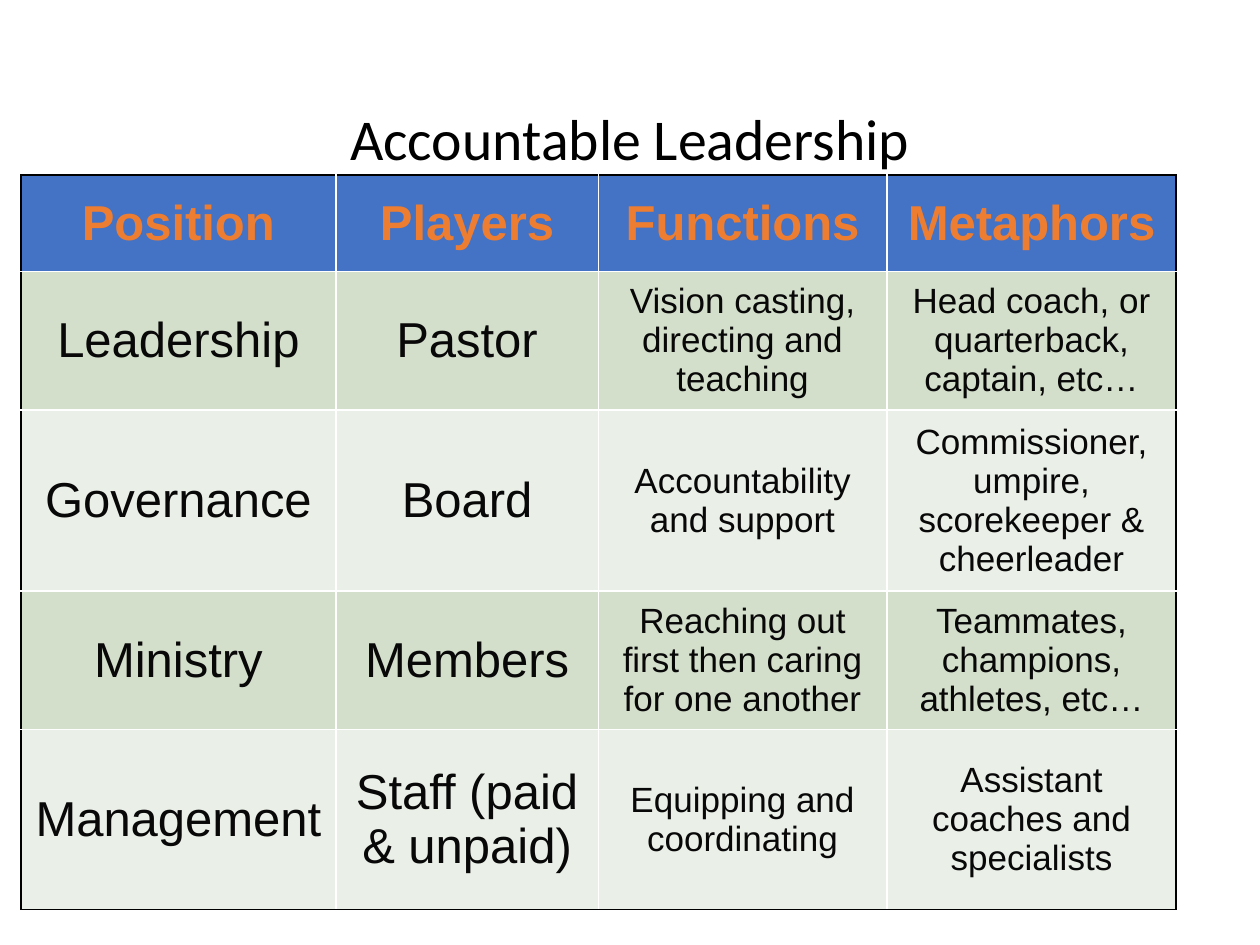
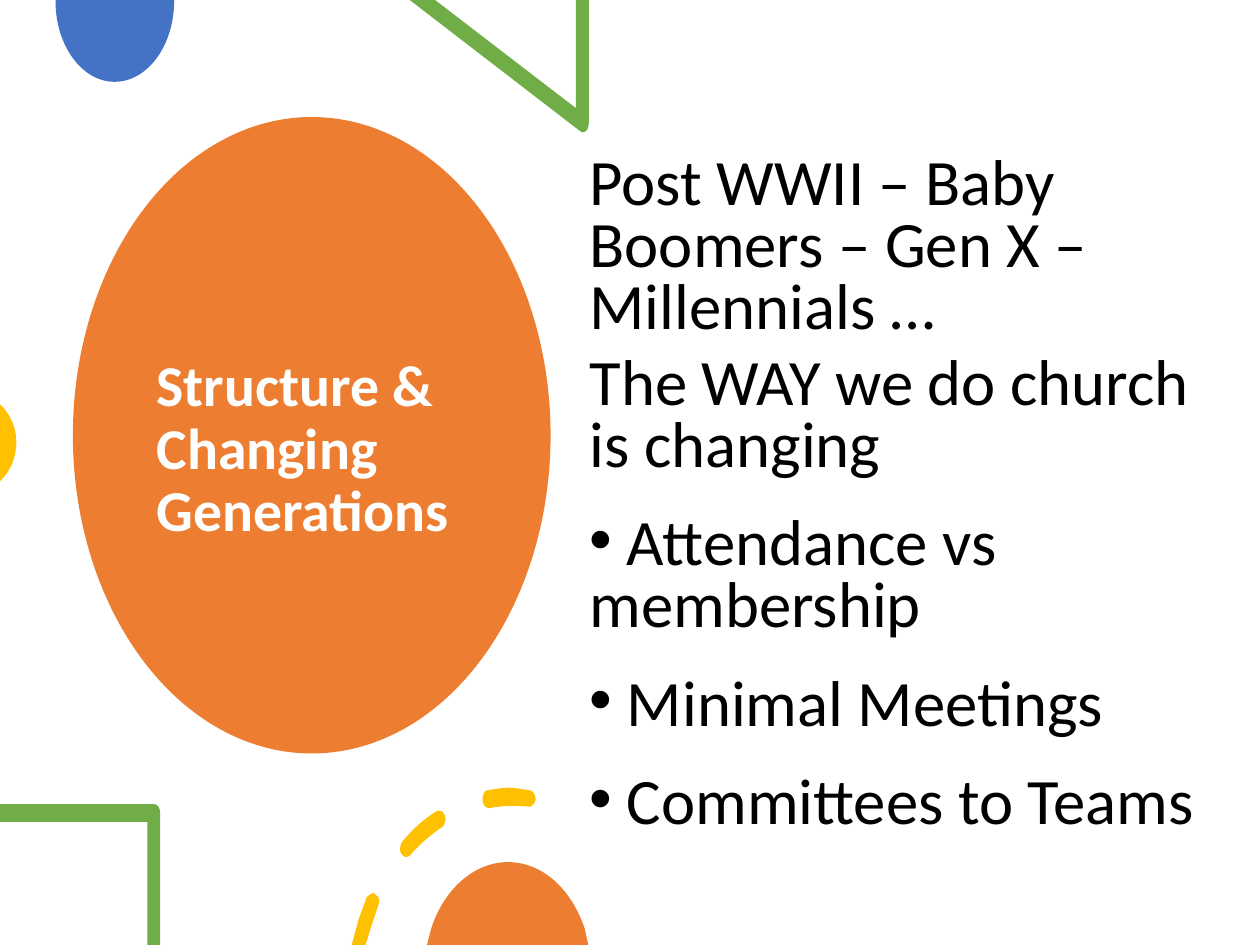
from lxml import etree
from pptx import Presentation
from pptx.dml.color import RGBColor
from pptx.enum.shapes import MSO_SHAPE
from pptx.enum.text import MSO_ANCHOR, PP_ALIGN
from pptx.oxml.ns import qn
from pptx.util import Cm, Pt

ELLIPSE = MSO_SHAPE.OVAL
TOP, MIDDLE = MSO_ANCHOR.TOP, MSO_ANCHOR.MIDDLE
LEFT, CENTER = PP_ALIGN.LEFT, PP_ALIGN.CENTER

BLACK = RGBColor(0x00, 0x00, 0x00)
WHITE = RGBColor(0xFF, 0xFF, 0xFF)
INK = RGBColor(0x08, 0x08, 0x08)
BLUE = RGBColor(0x44, 0x72, 0xC4)
ORANGE = RGBColor(0xED, 0x7D, 0x31)
GREEN = RGBColor(0x70, 0xAD, 0x47)
GOLD = RGBColor(0xFF, 0xC0, 0x00)
BANDS = (RGBColor(0xD3, 0xDE, 0xCB), RGBColor(0xEA, 0xEF, 0xE7))

TITLE_FORMAT = dict(size=33, line_spacing=0.9)

COLUMN_WIDTHS = (6.35, 5.29, 5.82, 5.83)
ROW_HEIGHTS = (1.94, 2.79, 3.4, 2.79, 3.63)
ROLES = (
    ("Position", "Players", "Functions", "Metaphors"),
    ("Leadership", "Pastor", "Vision casting, directing and teaching",
     "Head coach, or quarterback, captain, etc…"),
    ("Governance", "Board", "Accountability and support",
     "Commissioner, umpire, scorekeeper & cheerleader"),
    ("Ministry", "Members", "Reaching out first then caring for one another",
     "Teammates, champions, athletes, etc…"),
    ("Management", "Staff (paid & unpaid)", "Equipping and coordinating",
     "Assistant coaches and specialists"),
)

TRENDS = ("Post WWII – Baby Boomers – Gen X – Millennials …",
          "The WAY we do church is changing")
CHANGES = (" Attendance vs membership", " Minimal Meetings",
           " Committees to Teams")

# Contours in cm from the ornament's corner: two numbers make a straight
# step, six make a Bézier curve (two control points and the end).
BLUE_DROP = [[(2.39, 0), (0, 0), (0, 0.03), (0, 0.91, 0.53, 1.65, 1.19, 1.65),
              (1.86, 1.65, 2.39, 0.91, 2.39, 0.03)]]
GREEN_TRIANGLE = [[(3.61, 0), (3.35, 0), (3.35, 2.18), (0.51, 0), (0, 0),
                   (3.43, 2.64), (3.45, 2.67, 3.45, 2.67, 3.48, 2.67),
                   (3.56, 2.67, 3.61, 2.59, 3.61, 2.49)]]
GOLD_DOT = [[(0, 0), (0, 1.55), (0.03, 1.52),
             (0.2, 1.35, 0.33, 1.09, 0.33, 0.76),
             (0.33, 0.46, 0.2, 0.2, 0.03, 0.03)]]
GREEN_FRAME = [[(3.1, 0), (0, 0), (0, 0.36), (2.97, 0.36), (2.97, 2.84),
                (3.23, 2.84), (3.23, 0.18), (3.23, 0.08, 3.18, 0, 3.1, 0)]]
GOLD_DASHES = [
    [(0.46, 2.13), (0.41, 2.11, 0.36, 2.16, 0.3, 2.21),
     (0.25, 2.36, 0.18, 2.54, 0.13, 2.69), (0, 3.17), (0.28, 3.17),
     (0.38, 2.84), (0.43, 2.69, 0.48, 2.54, 0.53, 2.39),
     (0.58, 2.31, 0.56, 2.18, 0.48, 2.16)],
    [(1.75, 0.46), (1.7, 0.48), (1.45, 0.64, 1.22, 0.84, 1.02, 1.09),
     (0.97, 1.14, 0.97, 1.27, 0.99, 1.32),
     (1.02, 1.37, 1.07, 1.4, 1.09, 1.4),
     (1.14, 1.4, 1.17, 1.37, 1.19, 1.35),
     (1.37, 1.14, 1.6, 0.94, 1.83, 0.79),
     (1.88, 0.74, 1.91, 0.64, 1.88, 0.56),
     (1.85, 0.48, 1.8, 0.46, 1.75, 0.46)],
    [(3.18, 0), (3.02, 0, 2.9, 0.03, 2.74, 0.05),
     (2.69, 0.05, 2.62, 0.15, 2.64, 0.25),
     (2.64, 0.33, 2.69, 0.41, 2.77, 0.41),
     (3.05, 0.36, 3.3, 0.36, 3.56, 0.38),
     (3.61, 0.41, 3.68, 0.33, 3.71, 0.25),
     (3.71, 0.15, 3.66, 0.05, 3.58, 0.05),
     (3.43, 0.03, 3.3, 0, 3.18, 0)],
]
ORANGE_DOME = [[(1.63, 0), (0.94, 0, 0.33, 0.56, 0.08, 1.35), (0, 1.67),
                (3.25, 1.67), (3.18, 1.35), (2.92, 0.56, 2.34, 0, 1.63, 0)]]
ORNAMENTS = (
    (1.12, 0, BLUE_DROP, BLUE),
    (8.26, 0, GREEN_TRIANGLE, GREEN),
    (0, 8.15, GOLD_DOT, GOLD),
    (0, 16.21, GREEN_FRAME, GREEN),
    (7.09, 15.88, GOLD_DASHES, GOLD),
    (8.61, 17.38, ORANGE_DOME, ORANGE),
)


def write(paragraph, text, size, color=BLACK, font="Calibri", bold=False,
          align=LEFT, line_spacing=1.0, before=0, margin=0, bullet=None):
    paragraph.alignment = align
    paragraph.line_spacing = line_spacing
    paragraph.space_before = Pt(before)
    run = paragraph.add_run()
    run.text = text
    run.font.size, run.font.name, run.font.bold = Pt(size), font, bold
    run.font.color.rgb = color
    properties = paragraph._p.get_or_add_pPr()
    properties.set("marL", str(Cm(margin)))
    properties.set("indent", "0")
    if bullet:
        etree.SubElement(properties, qn("a:buFont"), typeface="Arial")
        etree.SubElement(properties, qn("a:buChar"), char=bullet)


def add_text_frame(slide, box, anchor):
    frame = slide.shapes.add_textbox(*map(Cm, box)).text_frame
    frame.word_wrap = True
    frame.vertical_anchor = anchor
    return frame


def add_title(slide, box, text, **style):
    frame = add_text_frame(slide, box, MIDDLE)
    write(frame.paragraphs[0], text, **TITLE_FORMAT, **style)


def paint(shape, color):
    shape.shadow.inherit = False
    shape.fill.solid()
    shape.fill.fore_color.rgb = color
    shape.line.fill.background()


def bend(segment, controls):
    """Turn a straight segment into a Bézier curve."""
    segment.tag = qn("a:cubicBezTo")
    for index in (0, 1):
        x, y = controls[2 * index:2 * index + 2]
        point = etree.Element(qn("a:pt"), x=str(Cm(x)), y=str(Cm(y)))
        segment.insert(index, point)


def add_ornament(slide, left, top, contours, color):
    builder = None
    for contour in contours:
        points = [(Cm(left + step[-2]), Cm(top + step[-1]))
                  for step in contour]
        if builder is None:
            builder = slide.shapes.build_freeform(*points[0])
        else:
            builder.move_to(*points[0])
        builder.add_line_segments(points[1:], close=True)
    shape = builder.convert_to_shape()
    segments = list(shape._element.iter(qn("a:lnTo")))
    steps = [step for contour in contours for step in contour[1:]]
    for segment, step in zip(segments, steps):
        if len(step) == 6:
            bend(segment, step[:4])
    paint(shape, color)


def set_borders(cell, colors):
    """Draw 1 pt borders, given as left, right, top and bottom colours."""
    properties = cell._tc.get_or_add_tcPr()
    for index, (side, color) in enumerate(zip("LRTB", colors)):
        line = etree.Element(qn(f"a:ln{side}"), w=str(Pt(1)))
        solid = etree.SubElement(line, qn("a:solidFill"))
        etree.SubElement(solid, qn("a:srgbClr"), val=str(color))
        properties.insert(index, line)


def add_role_table(slide, left, top):
    row_count, column_count = len(ROLES), len(ROLES[0])
    table = slide.shapes.add_table(
        row_count, column_count, Cm(left), Cm(top),
        Cm(sum(COLUMN_WIDTHS)), Cm(sum(ROW_HEIGHTS))).table
    for column, width in zip(table.columns, COLUMN_WIDTHS):
        column.width = Cm(width)
    for row, height in zip(table.rows, ROW_HEIGHTS):
        row.height = Cm(height)
    for r, texts in enumerate(ROLES):
        header = r == 0
        for c, text in enumerate(texts):
            cell = table.cell(r, c)
            cell.vertical_anchor = MIDDLE
            cell.fill.solid()
            cell.fill.fore_color.rgb = BLUE if header else BANDS[(r - 1) % 2]
            write(cell.text_frame.paragraphs[0], text,
                  size=28 if header or c < 2 else 20, font="Arial",
                  color=ORANGE if header else INK, bold=header, align=CENTER)
            outer = (c == 0, c == column_count - 1, header, r == row_count - 1)
            set_borders(cell, [BLACK if edge else WHITE for edge in outer])


def add_heading_disc(slide, box):
    left, top, width, height = box
    paint(slide.shapes.add_shape(ELLIPSE, *map(Cm, box)), ORANGE)
    add_title(slide, (left + 1.44, top + 1.07, width - 2.87, height - 1.53),
              "Structure & Changing Generations", color=WHITE, bold=True)


def add_trends(slide, box):
    frame = add_text_frame(slide, box, TOP)
    lines = [(text, 7.5, None) for text in TRENDS]
    lines += [(text, 20.6, "•") for text in CHANGES]
    for i, (text, before, bullet) in enumerate(lines):
        paragraph = frame.add_paragraph() if i else frame.paragraphs[0]
        write(paragraph, text, size=37, line_spacing=0.8, before=before,
              margin=0.48, bullet=bullet)


def build_leadership_slide(slide):
    add_title(slide, (1.75, 1.02, 21.9, 3.68), "Accountable Leadership",
              align=CENTER)
    add_role_table(slide, 0.42, 3.53)


def build_generations_slide(slide):
    add_heading_disc(slide, (1.47, 2.36, 9.63, 12.83))
    for ornament in ORNAMENTS:
        add_ornament(slide, *ornament)
    add_trends(slide, (11.16, 3.02, 13.49, 14.73))


def main():
    deck = Presentation()
    deck.slide_width, deck.slide_height = Cm(25.4), Cm(19.05)
    blank = deck.slide_layouts[6]
    for build in (build_leadership_slide, build_generations_slide):
        build(deck.slides.add_slide(blank))
    deck.save("out.pptx")


if __name__ == "__main__":
    main()
